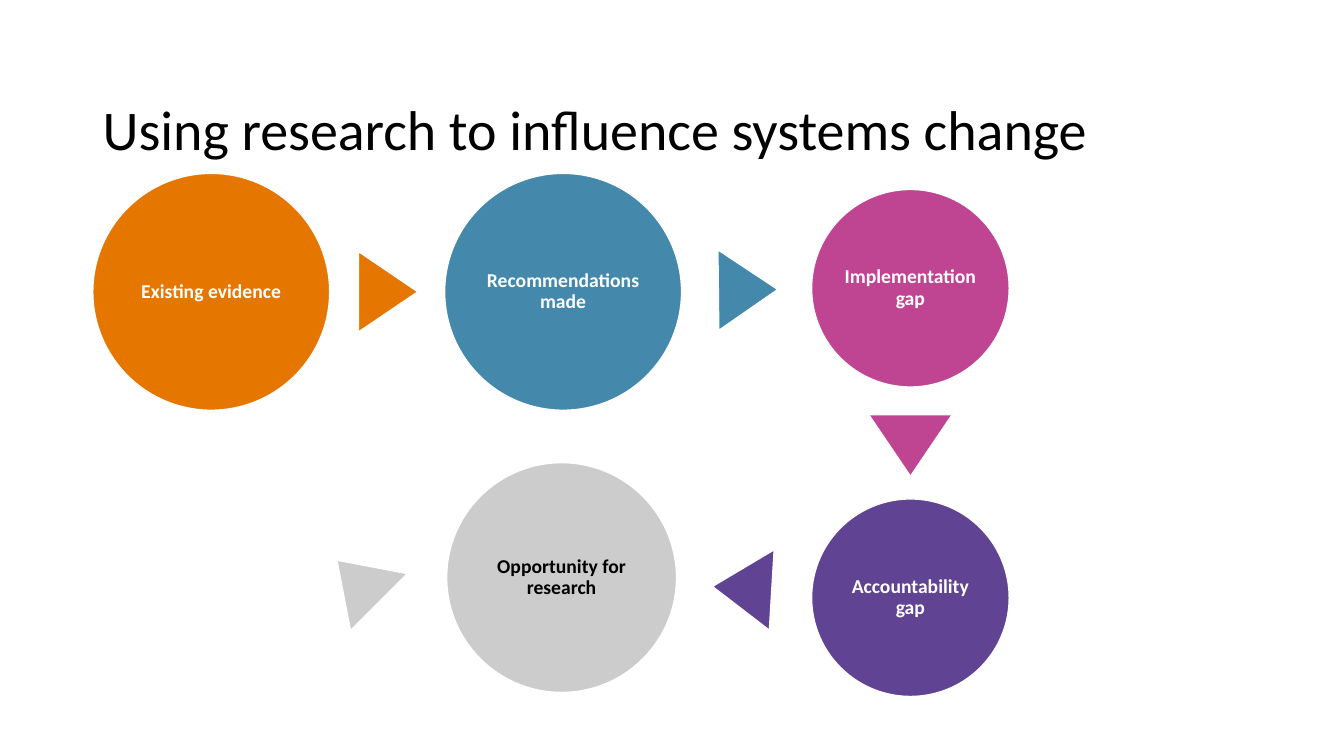
import pptx
import pptx.util
import pptx.dml.color
import pptx.enum.shapes
import pptx.enum.text

Inches = pptx.util.Inches
Pt = pptx.util.Pt
RGBColor = pptx.dml.color.RGBColor
Shape = pptx.enum.shapes.MSO_SHAPE
Align = pptx.enum.text.PP_ALIGN

WHITE = RGBColor(0xFF, 0xFF, 0xFF)
BLACK = RGBColor(0x00, 0x00, 0x00)
ORANGE = RGBColor(0xE5, 0x77, 0x00)
BLUE = RGBColor(0x44, 0x88, 0xAB)
PINK = RGBColor(0xBF, 0x45, 0x93)
PURPLE = RGBColor(0x61, 0x43, 0x93)
GREY = RGBColor(0xCC, 0xCC, 0xCC)

SLIDE_WIDTH, SLIDE_HEIGHT = 13.33, 7.5
ARROW_WIDTH, ARROW_HEIGHT = 0.8, 0.59
TITLE_BOX = (0.92, 0.59, 11.5, 1.45)
CYCLE_BOX = (0.92, 1.72, 9.09, 5.19)

# label, fill, text colour, centre x, centre y, diameter
STAGES = [
    ("Existing evidence", ORANGE, WHITE, 1.175, 1.175, 2.35),
    ("Recommendations made", BLUE, WHITE, 4.665, 1.175, 2.35),
    ("Implementation gap", PINK, WHITE, 8.11, 1.14, 1.96),
    ("Accountability gap", PURPLE, WHITE, 8.11, 4.21, 1.96),
    ("Opportunity for research", GREY, BLACK, 4.65, 4.01, 2.28),
]

# fill, rotation, centre x, centre y
ARROWS = [
    (ORANGE, 90, 2.93, 1.175),
    (BLUE, 89.4, 6.5, 1.155),
    (PINK, 180, 8.11, 2.695),
    (PURPLE, 273.4, 6.44, 4.115),
    (GREY, 314.9, 2.63, 4.045),
]


def write_text(shape, text, inset, alignment, font):
    frame = shape.text_frame
    settings = {
        "word_wrap": True,
        "vertical_anchor": pptx.enum.text.MSO_ANCHOR.MIDDLE,
        "margin_left": Inches(inset),
        "margin_right": Inches(inset),
        "margin_top": Inches(min(inset, 0.05)),
        "margin_bottom": Inches(min(inset, 0.05)),
    }
    for name, value in settings.items():
        setattr(frame, name, value)
    paragraph = frame.paragraphs[0]
    paragraph.text = text
    paragraph.alignment = alignment
    paragraph.line_spacing = 0.9
    color = font.pop("color")
    for name, value in {"name": "Calibri", **font}.items():
        setattr(paragraph.font, name, value)
    paragraph.font.color.rgb = color


def add_centred_shape(slide, kind, center_x, center_y, width, height, fill):
    shape = slide.shapes.add_shape(
        kind,
        Inches(center_x - width / 2),
        Inches(center_y - height / 2),
        Inches(width),
        Inches(height),
    )
    shape.shadow.inherit = False
    shape.fill.solid()
    shape.fill.fore_color.rgb = fill
    shape.line.color.rgb = WHITE
    shape.line.width = Pt(1)
    return shape


def add_title(slide, box):
    title = slide.shapes.add_textbox(*map(Inches, box))
    write_text(title, "Using research to influence systems change", 0.1,
               Align.LEFT, {"size": Pt(40), "color": BLACK})


def add_cycle(slide, box):
    left, top = box[:2]
    for label, fill, color, x, y, diameter in STAGES:
        circle = add_centred_shape(slide, Shape.OVAL, left + x, top + y,
                                   diameter, diameter, fill)
        write_text(circle, label, 0.02, Align.CENTER,
                   {"size": Pt(14), "bold": True, "color": color})
    for fill, rotation, x, y in ARROWS:
        arrow = add_centred_shape(slide, Shape.ISOSCELES_TRIANGLE, left + x,
                                  top + y, ARROW_WIDTH, ARROW_HEIGHT, fill)
        arrow.rotation = rotation
        if rotation == 180:
            arrow.line.fill.background()


def main():
    presentation = pptx.Presentation()
    presentation.slide_width = Inches(SLIDE_WIDTH)
    presentation.slide_height = Inches(SLIDE_HEIGHT)
    slide = presentation.slides.add_slide(presentation.slide_layouts[6])
    add_title(slide, TITLE_BOX)
    add_cycle(slide, CYCLE_BOX)
    presentation.save("out.pptx")


if __name__ == "__main__":
    main()
